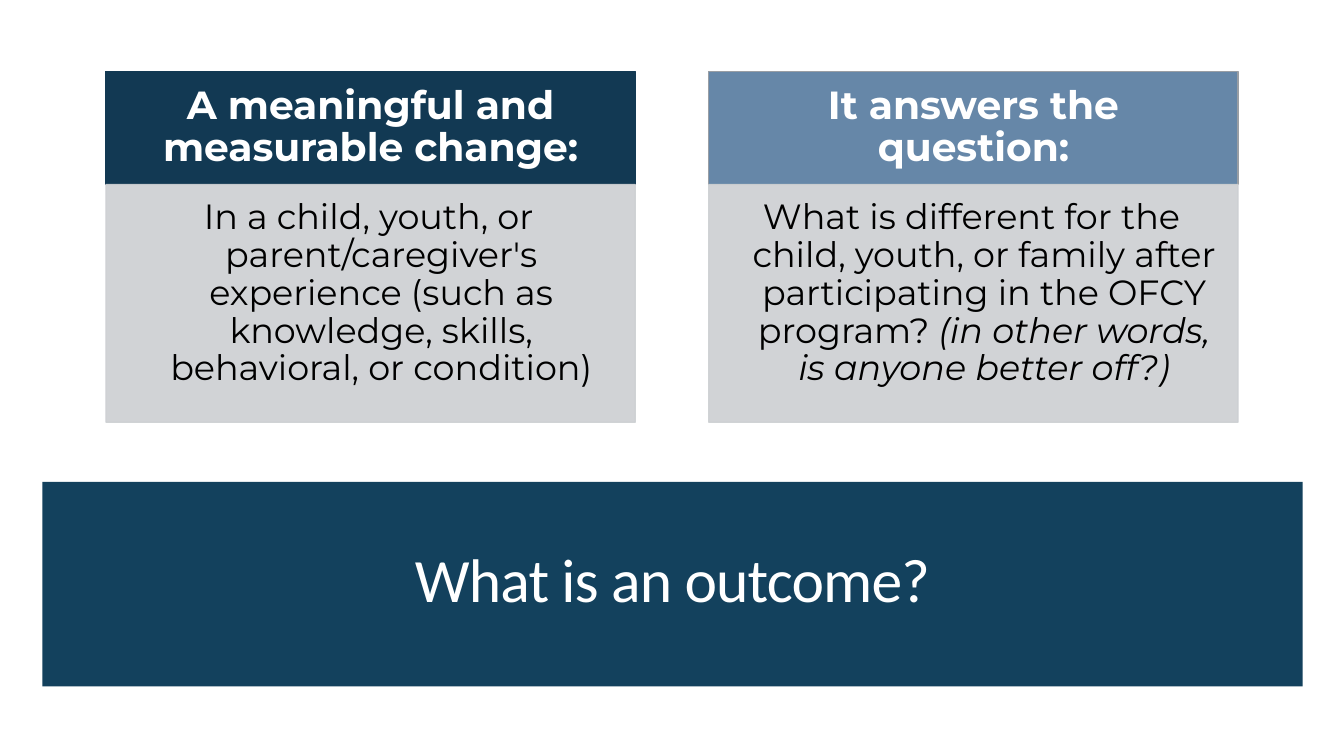
import pptx
import pptx.util
import pptx.dml.color
import pptx.enum.shapes
import pptx.enum.text
import pptx.oxml.ns
import lxml.etree

PX = 9144  # one hundredth of an inch in EMU
COLOURS = {
    "banner": "13415D",
    "navy": "123953",
    "steel": "6687A8",
    "steel edge": "999EA4",
    "panel": "CCCFD2",
    "white": "FFFFFF",
    "black": "000000",
}


def colour(name):
    return pptx.dml.color.RGBColor.from_string(COLOURS[name])


def fade(element, percent):
    """Give every solid colour below an element an opacity."""
    for tint in element.iter(pptx.oxml.ns.qn("a:srgbClr")):
        alpha = lxml.etree.SubElement(tint, pptx.oxml.ns.qn("a:alpha"))
        alpha.set("val", str(percent * 1000))


def add_text(para, text, font="Montserrat", size=25, ink="black",
             bold=False, italic=False, spacing=None):
    span = para.add_run()
    span.text = text
    span.font.name = font
    span.font.size = pptx.util.Pt(size)
    span.font.color.rgb = colour(ink)
    span.font.bold = bold
    span.font.italic = italic
    if spacing is not None:
        span.font._element.set("spc", str(spacing))


class OutcomeSlide:
    def __init__(self, deck):
        self.page = deck.slides.add_slide(deck.slide_layouts[5])

    def block(self, left, top, width, height, fill, edge=None, opacity=100):
        box = self.page.shapes.add_shape(
            pptx.enum.shapes.MSO_SHAPE.RECTANGLE,
            left * PX, top * PX, width * PX, height * PX)
        box.shadow.inherit = False
        box.fill.solid()
        box.fill.fore_color.rgb = colour(fill)
        if edge:
            box.line.color.rgb = colour(edge)
            box.line.width = pptx.util.Pt(0.85)
        else:
            box.line.fill.background()
        if opacity < 100:
            fade(box._element.spPr, opacity)
        return box

    def paragraph(self, box, insets, anchor):
        frame = box.text_frame
        frame.word_wrap = True
        frame.auto_size = pptx.enum.text.MSO_AUTO_SIZE.NONE
        frame.vertical_anchor = anchor
        (frame.margin_left, frame.margin_top,
         frame.margin_right, frame.margin_bottom) = [n * PX for n in insets]
        para = frame.paragraphs[0]
        para.alignment = pptx.enum.text.PP_ALIGN.CENTER
        para.line_spacing = 0.9
        return para

    def title(self, text, left, top, width, height):
        box = self.page.shapes.title
        box.left, box.top = left * PX, top * PX
        box.width, box.height = width * PX, height * PX
        para = self.paragraph(box, (10, 5, 10, 5),
                              pptx.enum.text.MSO_ANCHOR.MIDDLE)
        add_text(para, text, font="Calibri", size=44, ink="white", spacing=-60)
        # Bring the title in front of the banner
        box._element.getparent().append(box._element)

    def card(self, left, heading, fill, edge, body):
        header = self.block(left, 71, 525, 112, fill, edge)
        para = self.paragraph(header, (22, 12, 22, 12),
                              pptx.enum.text.MSO_ANCHOR.MIDDLE)
        add_text(para, heading, size=28, ink="white", bold=True)

        panel = self.block(left, 183, 525, 236, "panel", "panel", opacity=90)
        para = self.paragraph(panel, (15, 15, 19, 22),
                              pptx.enum.text.MSO_ANCHOR.TOP)
        # Hanging indent: the first line starts further left
        props = para._element.get_or_add_pPr()
        props.set("marL", str(25 * PX))
        props.set("indent", str(-25 * PX))
        for text, italic in body:
            add_text(para, text, italic=italic)


def main():
    deck = pptx.Presentation()
    deck.slide_width, deck.slide_height = 1333 * PX, 750 * PX
    slide = OutcomeSlide(deck)

    # Banner and title
    slide.block(42, 478, 1250, 203, "banner")
    slide.title("What is an outcome?", 61, 503, 1212, 149)

    # Two cards
    cards = [
        ("A meaningful and measurable change:", "navy", "navy",
         [("In a child, youth, or parent/caregiver's experience "
           "(such as knowledge, skills, behavioral, or condition)", False)]),
        ("It answers the question:", "steel", "steel edge",
         [("What is different for the child, youth, or family after "
           "participating in the OFCY program? ", False),
          ("(in other words, is anyone better off?)", True)]),
    ]
    for index, card in enumerate(cards):
        slide.card(105 + index * 598, *card)

    deck.save("out.pptx")


if __name__ == "__main__":
    main()
